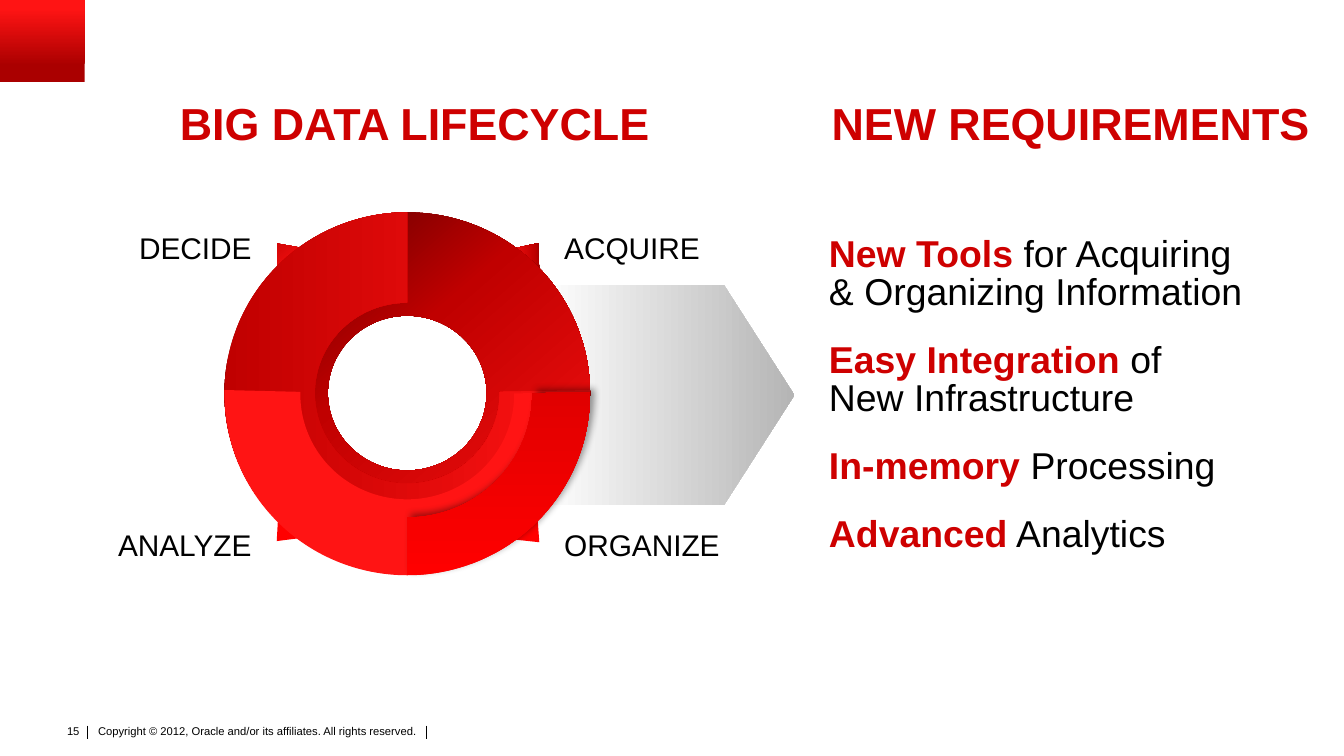
from dataclasses import dataclass

from pptx import Presentation
from pptx import util as u
from pptx.dml.color import RGBColor
from pptx.enum import shapes, text
from pptx.oxml import parse_xml
from pptx.oxml.ns import nsdecls

SHAPE = shapes.MSO_SHAPE
ALIGN = text.PP_ALIGN
ANCHOR = text.MSO_ANCHOR


@dataclass(frozen=True)
class Theme:
    font: str = "Arial"
    ink: str = "000000"
    accent: str = "CE0000"
    bright: str = "FF1414"
    pure: str = "FF0000"
    deep: str = "C00000"
    dark: str = "830000"
    badge: str = "AA0000"
    white: str = "FFFFFF"
    grey: str = "B5B5B5"
    heading: int = 24
    body: int = 20
    label: int = 16
    footer: int = 6


class SlideBuilder:
    def __init__(self, slide, theme):
        self.s = slide
        self.theme = theme

    def style(self, run, size, color=None, bold=False):
        run.font.name = self.theme.font
        run.font.size = u.Pt(size)
        run.font.bold = bold
        run.font.color.rgb = RGBColor.from_string(color or self.theme.ink)

    def place(self, sp, at):
        sp.left, sp.top, sp.width, sp.height = map(u.Inches, at)

    def text(self, at, content, size, align=ALIGN.LEFT, wrap=True, inset=(0.1, 0.05)):
        sp = self.s.shapes.add_textbox(*map(u.Inches, at))
        tf = sp.text_frame
        tf.word_wrap = wrap
        tf.margin_left = tf.margin_right = u.Inches(inset[0])
        tf.margin_top = tf.margin_bottom = u.Inches(inset[1])
        tf.text = content
        p = tf.paragraphs[0]
        p.alignment = align
        self.style(p.runs[0], size)

    def heading(self, sp, at, content):
        self.place(sp, at)
        tf = sp.text_frame
        tf.word_wrap = False
        tf.auto_size = text.MSO_AUTO_SIZE.NONE
        tf.vertical_anchor = ANCHOR.TOP
        tf.text = content
        p = tf.paragraphs[0]
        p.alignment = ALIGN.CENTER
        self.style(p.runs[0], self.theme.heading, self.theme.accent, True)

    def requirements(self, at, items):
        """Write paragraphs of a bold lead, its continuation and an optional second line."""
        sp = self.s.shapes.add_textbox(*map(u.Inches, at))
        tf = sp.text_frame
        tf.word_wrap = True
        tf.vertical_anchor = ANCHOR.MIDDLE
        for i, (lead, rest, *more) in enumerate(items):
            p = tf.add_paragraph() if i else tf.paragraphs[0]
            p.line_spacing = 0.85
            p.space_before = u.Pt(16 if i else 0)
            r = p.add_run()
            r.text = lead
            self.style(r, self.theme.body, self.theme.accent, True)
            r = p.add_run()
            r.text = rest
            self.style(r, self.theme.body)
            for line in more:
                p.add_line_break()
                r = p.add_run()
                r.text = line
                self.style(r, self.theme.body)

    def shape(self, kind, at, fill, angle=0, rotation=0, adj=()):
        """Add a shape; fill is a colour, or (percent, colour) stops with a clockwise angle."""
        sp = self.s.shapes.add_shape(kind, *map(u.Inches, at))
        sp.shadow.inherit = False
        sp.line.fill.background()
        sp.rotation = rotation
        for i, value in enumerate(adj):
            sp.adjustments[i] = value
        if isinstance(fill, str):
            sp.fill.solid()
            sp.fill.fore_color.rgb = RGBColor.from_string(fill)
        else:
            stops = "".join(
                f'<a:gs pos="{pos * 1000}"><a:srgbClr val="{color}"/></a:gs>'
                for pos, color in fill)
            grad = parse_xml(
                f'<a:gradFill {nsdecls("a")} rotWithShape="1"><a:gsLst>{stops}</a:gsLst>'
                f'<a:lin ang="{angle * 60000}" scaled="0"/></a:gradFill>')
            sp.line._get_or_add_ln().addprevious(grad)
        return sp

    def arc(self, at, start, end, thickness, fill, angle=0):
        """Add a ring segment running clockwise between two angles in degrees."""
        return self.shape(SHAPE.BLOCK_ARC, at, fill, angle,
                          adj=(start * 0.6, end * 0.6, thickness))

    def soft_shadow(self, sp):
        effects = sp._element.spPr.find(
            "{http://schemas.openxmlformats.org/drawingml/2006/main}effectLst")
        effects.append(parse_xml(
            f'<a:outerShdw {nsdecls("a")} blurRad="{u.Pt(4)}" dist="{u.Pt(3)}" '
            'dir="18900000" algn="bl" rotWithShape="0"><a:srgbClr val="000000">'
            '<a:alpha val="40000"/></a:srgbClr></a:outerShdw>'))

    def line(self, x1, y1, x2, y2):
        cn = self.s.shapes.add_connector(
            shapes.MSO_CONNECTOR.STRAIGHT, *map(u.Inches, (x1, y1, x2, y2)))
        cn.line.width = u.Pt(0.5)
        cn.line.color.rgb = RGBColor.from_string(self.theme.ink)
        cn._element.spPr.append(parse_xml(f'<a:effectLst {nsdecls("a")}/>'))


def main():
    prs = Presentation()
    prs.slide_width, prs.slide_height = u.Inches(10), u.Inches(10 * 9 / 16)
    s = prs.slides.add_slide(prs.slide_layouts[5])
    t = Theme()
    b = SlideBuilder(s, t)

    # Footer and corner
    b.text((0.69, 5.37, 2.74, 0.24),
           "Copyright © 2012, Oracle and/or its affiliates. All rights reserved.",
           t.footer, inset=(0.04, 0.02))
    for x in (0.65, 3.17):
        b.line(x, 5.4, x, 5.5)
    b.text((0.39, 5.34, 0.3, 0.2), "15", t.footer, ALIGN.RIGHT, wrap=False)
    b.shape(SHAPE.RECTANGLE, (0, 0, 0.63, 0.61), [(20, t.badge), (90, t.bright)], 270)

    # Headings
    b.heading(s.shapes.title, (1.22, 0.66, 3.73, 0.5), "BIG DATA LIFECYCLE")
    b.heading(s.shapes.add_textbox(0, 0, 0, 0), (6.07, 0.66, 3.79, 0.5), "NEW REQUIREMENTS")

    # Arrow and stage labels
    b.shape(SHAPE.PENTAGON, (4.02, 2.12, 1.89, 1.64),
            [(0, t.white), (100, t.grey)], adj=(0.32,))
    for row, (left, right) in zip((1.66, 3.87), (("DECIDE", "ACQUIRE"), ("ANALYZE", "ORGANIZE"))):
        b.text((0.48, row, 1.49, 0.37), left, t.label, ALIGN.RIGHT)
        b.text((4.1, row, 1.43, 0.37), right, t.label)

    b.requirements((6.07, 1.7, 3.73, 2.49), [
        ("New Tools", " for Acquiring ", "& Organizing Information"),
        ("Easy Integration ", "of ", "New Infrastructure"),
        ("In-memory", " Processing"),
        ("Advanced", " Analytics"),
    ])

    # Lifecycle ring: each stage has a pointer behind its segment
    acquire = [(21, t.dark), (42, t.deep), (100, t.bright)]
    decide = [(0, t.deep), (100, t.bright)]
    organize = [(0, t.pure), (100, t.deep)]
    ring = (1.67, 1.58, 2.72, 2.69)
    lower_ring = (1.67, 1.59, 2.72, 2.69)

    def pointer(x, y, rotation, fill, angle=0):
        b.shape(SHAPE.ISOSCELES_TRIANGLE, (x, y, 0.3, 0.18), fill, angle, rotation)

    pointer(3.8, 1.79, 38, acquire, 140)
    b.shape(SHAPE.DONUT, ring, acquire, 49, adj=(0.286,))
    pointer(1.97, 1.79, 320, decide, 90)
    b.arc(ring, 359.2, 270, 0.25, decide)
    pointer(1.97, 3.87, 223, t.pure)
    b.arc(lower_ring, 359.4, 181.4, 0.21, t.bright)
    pointer(3.8, 3.88, 136, t.pure)
    b.soft_shadow(b.arc(lower_ring, 359.4, 90.2, 0.16, organize, 270))

    prs.save("out.pptx")


if __name__ == "__main__":
    main()
